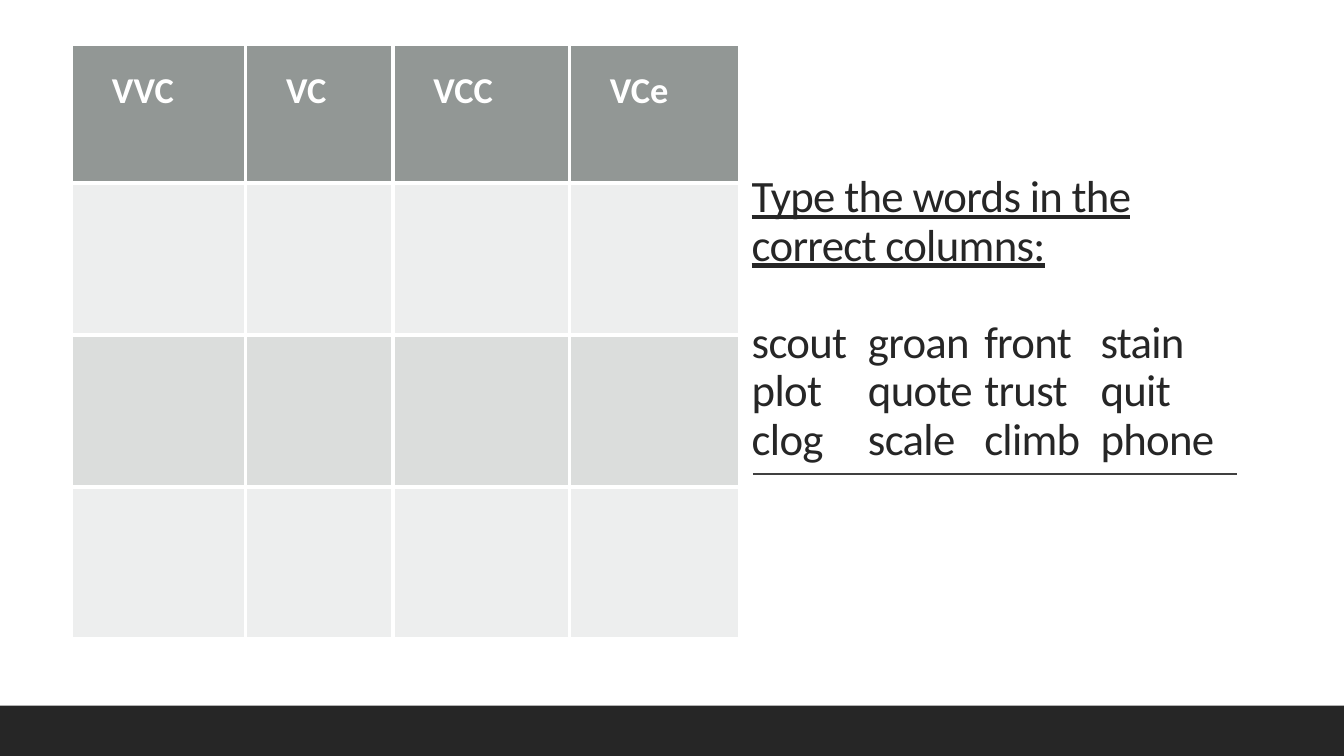
from dataclasses import dataclass

import lxml.etree
import pptx
import pptx.dml.color
import pptx.enum.shapes
import pptx.enum.text
import pptx.oxml
import pptx.oxml.ns
import pptx.util
from pptx.util import Cm, Pt

FONT = "Calibri"
COLORS = {
    "white": "FFFFFF",
    "dark": "262626",
    "rule": "404040",
    "header": "929795",
    "light_row": "EDEEEE",
    "dark_row": "DBDDDC",
}
COLUMN_WIDTHS = (4.39, 3.71, 4.45, 4.29)
HEADERS = ("VVC", "VC", "VCC", "VCe")
HEADING = "Type the words in the correct columns:"
WORD_ROWS = (
    ("scout", "groan", "front", "stain"),
    ("plot", "quote", "trust", "quit"),
    ("clog", "scale", "climb", "phone"),
)
WORD_PITCH = 2.93


@dataclass
class TableRow:
    height: float
    fill: str
    texts: tuple[str, ...] = ("",) * len(COLUMN_WIDTHS)


TABLE_ROWS = (
    TableRow(3.5, "header", HEADERS),
    TableRow(3.83, "light_row"),
    TableRow(3.83, "dark_row"),
    TableRow(3.83, "light_row"),
)


def color(name: str) -> pptx.dml.color.RGBColor:
    return pptx.dml.color.RGBColor.from_string(COLORS[name])


def format_run(run, size: float, color_name: str) -> None:
    run.font.name = FONT
    run.font.size = Pt(size)
    run.font.color.rgb = color(color_name)


def add_cell_borders(cell) -> None:
    """Put a white 3 pt line on each side; borders must precede the fill."""
    properties = cell._tc.get_or_add_tcPr()
    for position, side in enumerate(("lnL", "lnR", "lnT", "lnB")):
        border = pptx.oxml.parse_xml(
            f'<a:{side} {pptx.oxml.ns.nsdecls("a")} w="{Pt(3)}"><a:solidFill>'
            f'<a:srgbClr val="{COLORS["white"]}"/></a:solidFill></a:{side}>'
        )
        properties.insert(position, border)


def add_word_table(slide) -> None:
    frame = slide.shapes.add_table(
        len(TABLE_ROWS), len(COLUMN_WIDTHS), Cm(1.8), Cm(1.11),
        Cm(sum(COLUMN_WIDTHS)), Cm(sum(row.height for row in TABLE_ROWS)),
    )
    table = frame.table
    for column, width in zip(table.columns, COLUMN_WIDTHS):
        column.width = Cm(width)
    for table_row, row in zip(table.rows, TABLE_ROWS):
        table_row.height = Cm(row.height)
        for cell, text in zip(table_row.cells, row.texts):
            cell.fill.solid()
            cell.fill.fore_color.rgb = color(row.fill)
            add_cell_borders(cell)
            if text:
                cell.margin_left = Cm(1.02)
                cell.margin_top = cell.margin_right = cell.margin_bottom = Cm(0.61)
                cell.text_frame.text = text
                run = cell.text_frame.paragraphs[0].runs[0]
                format_run(run, 26, "white")
                run.font.bold = True


def add_tab_stops(paragraph) -> None:
    properties = paragraph._p.get_or_add_pPr()
    tab_list = lxml.etree.SubElement(properties, pptx.oxml.ns.qn("a:tabLst"))
    for index in range(1, len(WORD_ROWS[0])):
        lxml.etree.SubElement(
            tab_list, pptx.oxml.ns.qn("a:tab"),
            pos=str(Cm(WORD_PITCH * index)), algn="l",
        )


def fill_title(slide) -> None:
    title = slide.shapes.title
    title.left, title.top = Cm(18.69), Cm(1.78)
    title.width, title.height = Cm(13.36), Cm(12.14)
    frame = title.text_frame
    frame.text = "\n".join([HEADING, *("\t".join(words) for words in WORD_ROWS)])
    frame.word_wrap = True
    frame.auto_size = pptx.enum.text.MSO_AUTO_SIZE.NONE
    frame.vertical_anchor = pptx.enum.text.MSO_ANCHOR.BOTTOM
    frame.margin_bottom = Cm(2.2)
    for index, paragraph in enumerate(frame.paragraphs):
        paragraph.alignment = pptx.enum.text.PP_ALIGN.LEFT
        paragraph.line_spacing = 0.9
        paragraph.space_before = Pt(35 if index == 1 else 0)
        if index > 0:
            add_tab_stops(paragraph)
        for run in paragraph.runs:
            format_run(run, 32, "dark")
            run.font.underline = index == 0
            run._r.get_or_add_rPr().set("spc", "-50")


def add_title_rule(slide) -> None:
    rule = slide.shapes.add_connector(
        pptx.enum.shapes.MSO_CONNECTOR.STRAIGHT,
        Cm(18.97), Cm(11.94), Cm(31.17), Cm(11.94),
    )
    rule.line.color.rgb = color("rule")
    rule.line.width = Pt(1)
    lxml.etree.SubElement(rule._element.spPr, pptx.oxml.ns.qn("a:effectLst"))


def add_footer_band(slide, slide_width: int) -> None:
    band = slide.shapes.add_shape(
        pptx.enum.shapes.MSO_SHAPE.RECTANGLE, 0, Cm(17.78), slide_width, Cm(1.27)
    )
    band.shadow.inherit = False
    band.fill.solid()
    band.fill.fore_color.rgb = color("dark")
    band.line.fill.background()


def main() -> None:
    presentation = pptx.Presentation()
    presentation.slide_width = Cm(33.87)
    presentation.slide_height = Cm(19.05)
    slide = presentation.slides.add_slide(presentation.slide_layouts[5])
    slide.background.fill.solid()
    slide.background.fill.fore_color.rgb = color("white")
    fill_title(slide)
    add_title_rule(slide)
    add_footer_band(slide, presentation.slide_width)
    add_word_table(slide)
    presentation.save("out.pptx")


if __name__ == "__main__":
    main()
